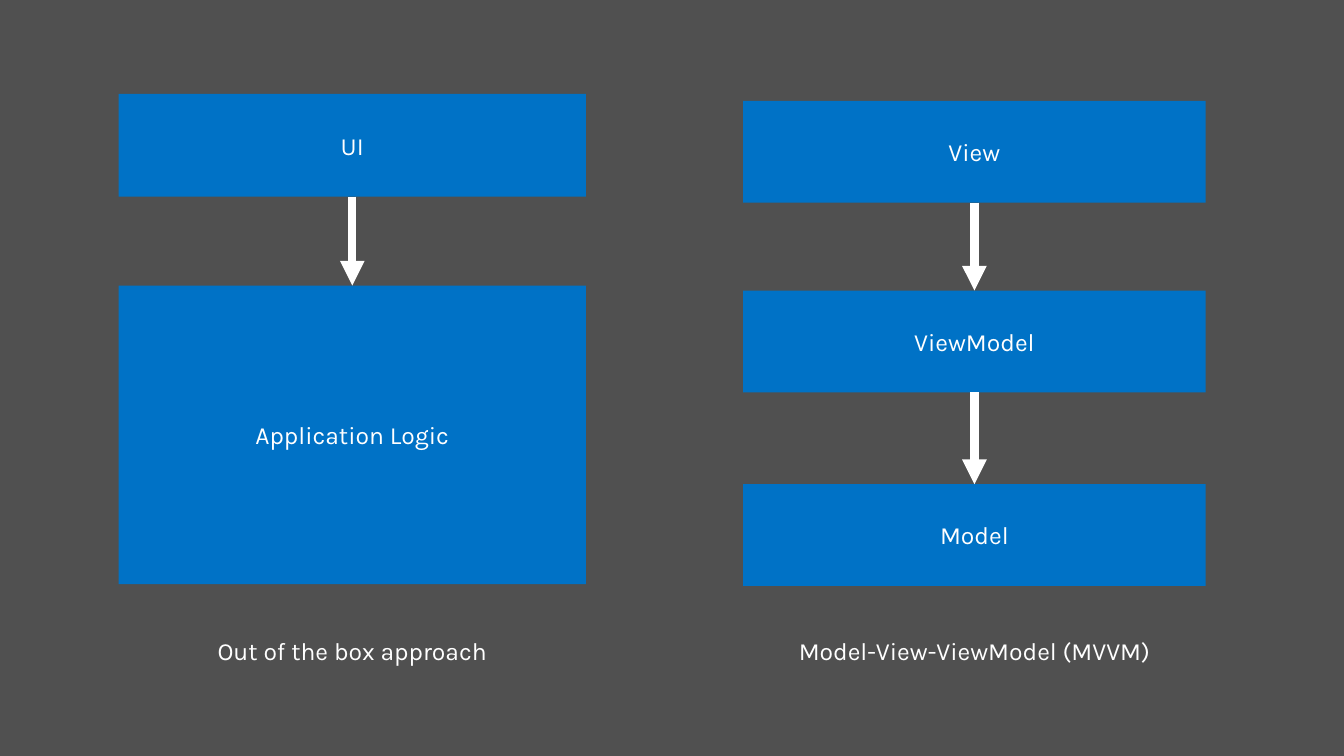
from lxml.etree import SubElement
from pptx import Presentation
from pptx.dml.color import RGBColor
from pptx.enum.shapes import MSO_CONNECTOR, MSO_SHAPE
from pptx.enum.text import MSO_ANCHOR, MSO_AUTO_SIZE, PP_ALIGN
from pptx.oxml.ns import qn
from pptx.util import Inches, Pt

COLORS = {"background": "505050", "box": "0072C6", "light": "FFFFFF"}
CAPTION_TOP = 6.38


def rgb(name):
    return RGBColor.from_string(COLORS[name])


def write_text(frame, text, size=18, font="Karla", color="light",
               anchor=MSO_ANCHOR.MIDDLE, wrap=True):
    frame.word_wrap = wrap
    frame.vertical_anchor = anchor
    paragraph = frame.paragraphs[0]
    paragraph.alignment = PP_ALIGN.CENTER
    run = paragraph.add_run()
    run.text = text
    run.font.size = Pt(size)
    run.font.name = font
    run.font.color.rgb = rgb(color)


# Each layer is (label, top, height), from the upper one to the lower one
approaches = [
    {"caption": "Out of the box approach", "caption_size": (2.93, 0.4),
     "left": 1.2, "width": 4.73,
     "layers": [("UI", 0.95, 1.04), ("Application Logic", 2.89, 3.02)]},
    {"caption": "Model-View-ViewModel (MVVM)", "caption_size": (5.27, 0.59),
     "left": 7.52, "width": 4.68,
     "layers": [("View", 1.02, 1.03), ("ViewModel", 2.94, 1.03),
                ("Model", 4.9, 1.03)]},
]

prs = Presentation()
prs.slide_width = Inches(13.6)
prs.slide_height = Inches(7.65)
slide = prs.slides.add_slide(prs.slide_layouts[6])
slide.background.fill.solid()
slide.background.fill.fore_color.rgb = rgb("background")

for approach in approaches:
    diagram = slide.shapes.add_group_shape().shapes
    layers = approach["layers"]
    center = approach["left"] + approach["width"] / 2

    for label, top, height in layers:
        box = diagram.add_shape(
            MSO_SHAPE.RECTANGLE, Inches(approach["left"]), Inches(top),
            Inches(approach["width"]), Inches(height))
        box.shadow.inherit = False
        box.fill.solid()
        box.fill.fore_color.rgb = rgb("box")
        box.line.fill.background()
        write_text(box.text_frame, label)

    for (_, top, height), (_, next_top, _) in zip(layers, layers[1:]):
        arrow = diagram.add_connector(
            MSO_CONNECTOR.STRAIGHT, Inches(center), Inches(top + height),
            Inches(center), Inches(next_top))
        arrow.line.color.rgb = rgb("light")
        arrow.line.width = Pt(6)
        SubElement(arrow.line._get_or_add_ln(), qn("a:tailEnd"), type="triangle")
        SubElement(arrow._element.spPr, qn("a:effectLst"))

    width, height = approach["caption_size"]
    caption = diagram.add_textbox(
        Inches(center - width / 2), Inches(CAPTION_TOP),
        Inches(width), Inches(height))
    write_text(caption.text_frame, approach["caption"],
               anchor=MSO_ANCHOR.TOP, wrap=False)
    caption.text_frame.auto_size = MSO_AUTO_SIZE.SHAPE_TO_FIT_TEXT

prs.save("out.pptx")
